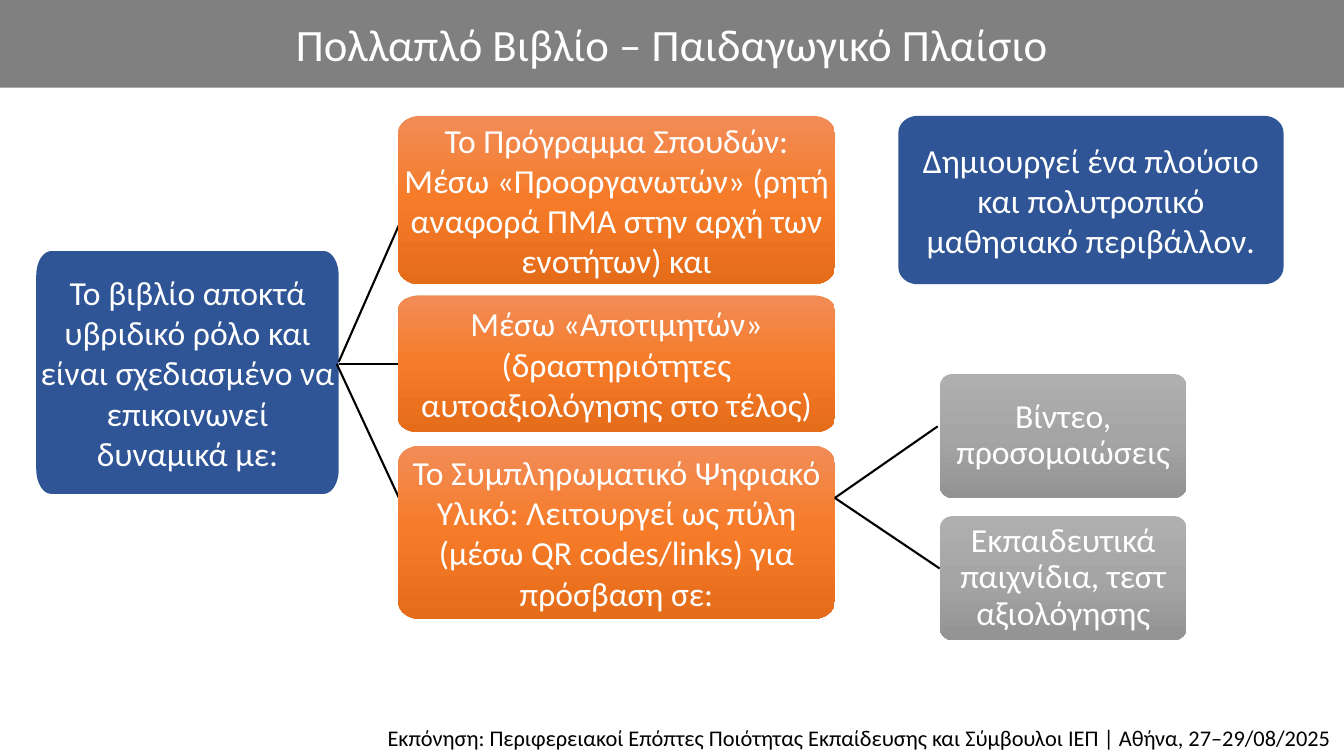
from copy import deepcopy

from pptx import Presentation
from pptx.dml.color import RGBColor
from pptx.enum.shapes import MSO_CONNECTOR
from pptx.enum.text import MSO_ANCHOR, MSO_AUTO_SIZE, PP_ALIGN
from pptx.oxml.ns import qn
from pptx.util import Inches, Pt

CENTER, RIGHT = PP_ALIGN.CENTER, PP_ALIGN.RIGHT
MIDDLE, TOP = MSO_ANCHOR.MIDDLE, MSO_ANCHOR.TOP
NO_AUTOFIT = MSO_AUTO_SIZE.NONE
STRAIGHT = MSO_CONNECTOR.STRAIGHT

WHITE = RGBColor(0xFF, 0xFF, 0xFF)
BLACK = RGBColor(0x00, 0x00, 0x00)
HEADER_GRAY = RGBColor(0x80, 0x80, 0x80)
BLUE = (RGBColor(0x2F, 0x55, 0x97),)
ORANGE = (RGBColor(0xF1, 0x8C, 0x57), RGBColor(0xF6, 0x7B, 0x28), RGBColor(0xE5, 0x6C, 0x19))
GRAY = (RGBColor(0xAF, 0xAF, 0xAF), RGBColor(0xA5, 0xA5, 0xA5), RGBColor(0x93, 0x93, 0x93))

FONT = "Calibri"
CARD_INSET = 0.04
CORNER_X, CORNER_Y = 0.05, 0.1
ARC_PULL = 0.55

ROLE = "Το βιβλίο αποκτά υβριδικό ρόλο και είναι σχεδιασμένο να επικοινωνεί δυναμικά με:"
ENVIRONMENT = "Δημιουργεί ένα πλούσιο και πολυτροπικό μαθησιακό περιβάλλον."
PARTNERS = [
    (1.15, 1.67, "Το Πρόγραμμα Σπουδών: Μέσω «Προοργανωτών» (ρητή αναφορά ΠΜΑ στην αρχή των ενοτήτων) και"),
    (2.93, 1.36, "Μέσω «Αποτιμητών» (δραστηριότητες αυτοαξιολόγησης στο τέλος)"),
    (4.42, 1.72, "Το Συμπληρωματικό Ψηφιακό Υλικό: Λειτουργεί ως πύλη (μέσω QR codes/links) για πρόσβαση σε:"),
]
RESOURCES = [
    (3.71, "Βίντεο, προσομοιώσεις"),
    (5.12, "Εκπαιδευτικά παιχνίδια, τεστ αξιολόγησης"),
]
PARTNER_BRANCHES = [
    ((3.36, 3.59), (3.98, 2.18)),
    ((3.36, 3.61), (3.98, 3.61)),
    ((3.99, 5.01), (3.34, 3.61)),
]
RESOURCE_BRANCHES = [
    ((8.28, 4.94), (9.3, 4.23)),
    ((8.28, 4.94), (9.32, 5.64)),
]


def set_values(target, values):
    for attribute, value in values.items():
        setattr(target, attribute, value)


def write_text(shape, text, size, color, align=CENTER, anchor=MIDDLE, spacing=1.0, inset=None):
    frame = shape.text_frame
    frame.text = text
    set_values(frame, {"word_wrap": True, "auto_size": NO_AUTOFIT, "vertical_anchor": anchor})
    if inset is not None:
        sides = ("margin_left", "margin_top", "margin_right", "margin_bottom")
        set_values(frame, dict.fromkeys(sides, Inches(inset)))
    paragraph = frame.paragraphs[0]
    set_values(paragraph, {"alignment": align, "line_spacing": spacing})
    set_values(paragraph.runs[0].font, {"name": FONT, "size": Pt(size)})
    paragraph.runs[0].font.color.rgb = color


def place(shape, left, top, width, height):
    set_values(shape, {"left": Inches(left), "top": Inches(top),
                       "width": Inches(width), "height": Inches(height)})


def paint(shape, colors):
    fill = shape.fill
    if len(colors) == 1:
        fill.solid()
        fill.fore_color.rgb = colors[0]
        return
    fill.gradient()
    fill.gradient_angle = 270
    stop_list = shape._element.spPr.find(qn("a:gradFill")).find(qn("a:gsLst"))
    while len(stop_list) < len(colors):
        stop_list.append(deepcopy(stop_list[0]))
    for index, (stop, color) in enumerate(zip(fill.gradient_stops, colors)):
        stop.position = index / (len(colors) - 1)
        stop.color.rgb = color


def card_outline(left, top, width, height):
    right, bottom = left + width, top + height
    radius_x, radius_y = width * CORNER_X, height * CORNER_Y
    points = [
        (left, top + radius_y), (left + radius_x, top),
        (right - radius_x, top), (right, top + radius_y),
        (right, bottom - radius_y), (right - radius_x, bottom),
        (left + radius_x, bottom), (left, bottom - radius_y),
    ]
    return [(Inches(x), Inches(y)) for x, y in points]


def round_corners(card):
    points = list(card._element.spPr.iter(qn("a:pt")))
    spots = [(int(point.get("x")), int(point.get("y"))) for point in points]
    for index in range(0, len(points), 2):
        start, end = spots[index], spots[index + 1]
        corner = (start[0], end[1]) if index % 4 == 0 else (end[0], start[1])
        side = points[index + 1].getparent()
        curve = side.makeelement(qn("a:cubicBezTo"), {})
        for anchor in (start, end):
            x, y = (round(a + ARC_PULL * (c - a)) for a, c in zip(anchor, corner))
            curve.append(curve.makeelement(qn("a:pt"), {"x": str(x), "y": str(y)}))
        side.getparent().replace(side, curve)
        curve.append(points[index + 1])


def add_card(slide, left, top, width, height, text, colors, spacing=1.0):
    outline = card_outline(left, top, width, height)
    builder = slide.shapes.build_freeform(*outline[0])
    builder.add_line_segments(outline[1:], close=True)
    card = builder.convert_to_shape()
    round_corners(card)
    card.shadow.inherit = False
    paint(card, colors)
    card.line.fill.background()
    write_text(card, text, 24, WHITE, spacing=spacing, inset=CARD_INSET)


def add_branches(slide, branches):
    for start, end in branches:
        branch = slide.shapes.add_connector(STRAIGHT, *map(Inches, start + end))
        branch.line.color.rgb = BLACK
        branch.line.width = Pt(1.5)
        properties = branch._element.spPr
        properties.append(properties.makeelement(qn("a:effectLst"), {}))


def add_header(slide):
    header = slide.shapes.title
    place(header, 0, 0, 13.33, 0.87)
    paint(header, (HEADER_GRAY,))
    write_text(header, "Πολλαπλό Βιβλίο – Παιδαγωγικό Πλαίσιο", 32, WHITE)


def add_credit(slide):
    credit = slide.shapes.add_textbox(*map(Inches, (0.03, 7.11, 13.27, 0.39)))
    paint(credit, (WHITE,))
    write_text(credit, "Εκπόνηση: Περιφερειακοί Επόπτες Ποιότητας Εκπαίδευσης και "
               "Σύμβουλοι ΙΕΠ | Αθήνα, 27–29/08/2025",
               16, BLACK, align=RIGHT, anchor=TOP, spacing=1.1)


def main():
    deck = Presentation()
    set_values(deck, {"slide_width": Inches(13.33), "slide_height": Inches(7.5)})
    slide = deck.slides.add_slide(deck.slide_layouts[5])
    add_header(slide)
    add_card(slide, 8.91, 1.15, 3.82, 1.67, ENVIRONMENT, BLUE)
    add_card(slide, 0.36, 2.49, 3, 2.41, ROLE, BLUE)
    add_branches(slide, PARTNER_BRANCHES)
    for top, height, text in PARTNERS:
        add_card(slide, 3.95, top, 4.33, height, text, ORANGE)
    add_branches(slide, RESOURCE_BRANCHES)
    for top, text in RESOURCES:
        add_card(slide, 9.32, top, 2.45, 1.23, text, GRAY, spacing=0.9)
    add_credit(slide)
    deck.save("out.pptx")


if __name__ == "__main__":
    main()
